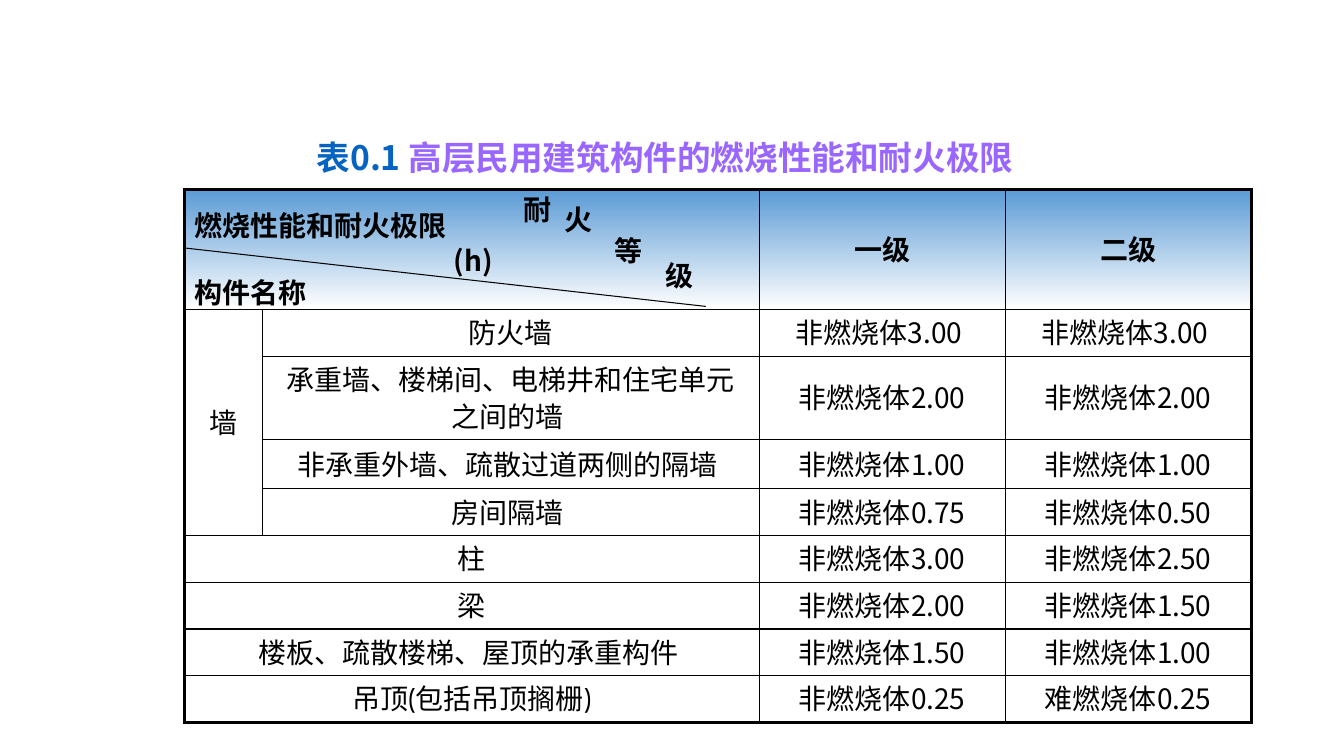
from lxml import etree
from pptx import Presentation, util as u
from pptx.dml.color import RGBColor
from pptx.enum import shapes, text
from pptx.oxml.ns import qn

# Content
TITLE = [("表0.1 ", "0563C1"), ("高层民用建筑构件的燃烧性能和耐火极限", "9966FF")]
GRADES = ["一级", "二级"]
WALL = "墙"
WALL_PARTS = [
    ("防火墙", ("非燃烧体", "3.00 "), ("非燃烧体", "3.00 ")),
    ("承重墙、楼梯间、电梯井和住宅单元之间的墙 ", ("非燃烧体", "2.00"), ("非燃烧体", "2.00")),
    ("非承重外墙、疏散过道两侧的隔墙 ", ("非燃烧体", "1.00"), ("非燃烧体", "1.00")),
    ("房间隔墙 ", ("非燃烧体", "0.75"), ("非燃烧体", "0.50")),
]
OTHER_PARTS = [
    ("柱", ("非燃烧体", "3.00"), ("非燃烧体", "2.50")),
    ("梁", ("非燃烧体", "2.00"), ("非燃烧体", "1.50")),
    ("楼板、疏散楼梯、屋顶的承重构件 ", ("非燃烧体", "1.50"), ("非燃烧体", "1.00")),
    ("吊顶(包括吊顶搁栅)", ("非燃烧体", "0.25"), ("难燃烧体", "0.25")),
]
CABIN, NOTO = "Cabin", "Noto Sans CJK SC"
# text, left, top, width, wraps, font
HEADER_LABELS = [
    ("耐", 509, 186, 50, True, CABIN),
    ("火", 550, 196, 50, True, CABIN),
    ("等", 600, 227, 48, False, CABIN),
    ("级", 650, 252, 48, False, CABIN),
    ("燃烧性能和耐火极限", 183, 202, 271, False, CABIN),
    ("(h)", 440, 237, 62, False, NOTO),
    ("构件名称", 183, 268, 132, False, CABIN),
]

# Layout, 100 px to the inch
PX = 9144
COLUMNS = [77, 213, 280, 244, 244]
ROWS = [119, 43, 70, 49, 43, 40, 40, 43, 43]
TABLE_LEFT, TABLE_TOP = 183, 188
BLACK, BLUE, WHITE = "000000", "5B9BD5", "FFFFFF"
THICK, THIN = 2.25, 1


def px(*lengths):
    return [u.Emu(length * PX) for length in lengths]


def color(value):
    return RGBColor.from_string(value)


def style(run, size, font, value, bold):
    run.font.size, run.font.name, run.font.bold = u.Pt(size), font, bold
    run.font.color.rgb = color(value)
    latin = run.font._element.find(qn("a:latin"))
    latin.addnext(latin.makeelement(qn("a:ea"), {"typeface": NOTO}))


def set_borders(cell, widths):
    """Widths run left, right, top, bottom; 0 leaves the edge open."""
    properties = cell._tc.get_or_add_tcPr()
    for index, (side, width) in enumerate(zip("LRTB", widths)):
        edge = etree.Element(qn(f"a:ln{side}"), w=str(u.Pt(width)))
        properties.insert(index, edge)
        if width:
            fill = etree.SubElement(edge, qn("a:solidFill"))
            etree.SubElement(fill, qn("a:srgbClr"), val=BLACK)
        else:
            etree.SubElement(edge, qn("a:noFill"))


def fill_cell(cell, is_header):
    if not is_header:
        cell.fill.background()
        return
    cell.fill.gradient()
    cell.fill.gradient_angle = 270
    for stop, value in zip(cell.fill.gradient_stops, (BLUE, WHITE)):
        stop.color.rgb = color(value)


def write_cell(cell, pieces, bold):
    cell.vertical_anchor = text.MSO_ANCHOR.MIDDLE
    paragraph = cell.text_frame.paragraphs[0]
    paragraph.alignment, paragraph.line_spacing = text.PP_ALIGN.CENTER, 0.9
    for piece, font in zip(pieces, (CABIN, NOTO)):
        run = paragraph.add_run()
        run.text = piece
        style(run, 20, font, BLACK, bold)


def table_regions():
    """Row, column, row span, column span and text pieces of every cell."""
    yield 0, 0, 1, 2, ()
    yield 0, 2, 1, 1, ()
    for column, grade in enumerate(GRADES, 3):
        yield 0, column, 1, 1, (grade,)
    yield 1, 0, len(WALL_PARTS), 1, (WALL,)
    for row, (part, *limits) in enumerate(WALL_PARTS + OTHER_PARTS, 1):
        first = 1 if row <= len(WALL_PARTS) else 0
        yield row, first, 1, 3 - first, (part,)
        for column, limit in enumerate(limits, 3):
            yield row, column, 1, 1, limit


def add_limits_table(slide):
    frame = slide.shapes.add_table(
        len(ROWS), len(COLUMNS),
        *px(TABLE_LEFT, TABLE_TOP, sum(COLUMNS), sum(ROWS)))
    table = frame.table
    table.first_row = table.horz_banding = False
    for column, width in zip(table.columns, px(*COLUMNS)):
        column.width = width
    for row, height in zip(table.rows, px(*ROWS)):
        row.height = height

    for top, left, height, width, pieces in table_regions():
        bottom, right = top + height, left + width
        is_header = top == 0
        open_edge = is_header and 2 in (left, right)
        borders = [
            THICK if left == 0 else 0 if open_edge and left == 2 else THIN,
            THICK if right == len(COLUMNS) else 0 if open_edge and right == 2 else THIN,
            THICK if is_header else THIN,
            THICK if bottom == len(ROWS) else THIN,
        ]
        for row in range(top, bottom):
            for column in range(left, right):
                fill_cell(table.cell(row, column), is_header)
                set_borders(table.cell(row, column), borders)
        origin = table.cell(top, left)
        if height * width > 1:
            origin.merge(table.cell(bottom - 1, right - 1))
        write_cell(origin, pieces, is_header)


def main():
    deck = Presentation()
    deck.slide_width, deck.slide_height = px(1333, 750)
    slide = deck.slides.add_slide(deck.slide_layouts[5])

    # Title
    title = slide.shapes.title
    title.left, title.top, title.width, title.height = px(304, 99, 756, 82)
    title.text_frame.auto_size = text.MSO_AUTO_SIZE.NONE
    title.text_frame.vertical_anchor = text.MSO_ANCHOR.BOTTOM
    heading = title.text_frame.paragraphs[0]
    heading.alignment, heading.line_spacing = text.PP_ALIGN.LEFT, 0.9
    for piece, value in TITLE:
        run = heading.add_run()
        run.text = piece
        style(run, 24, NOTO, value, True)

    add_limits_table(slide)

    # Diagonal of the header cell
    diagonal = slide.shapes.add_connector(
        shapes.MSO_CONNECTOR.STRAIGHT, *px(183, 246, 700, 304))
    diagonal.line.color.rgb, diagonal.line.width = color(BLACK), u.Pt(0.75)
    etree.SubElement(diagonal._element.spPr, qn("a:effectLst"))

    # Labels around the diagonal
    for label, left, top, width, wraps, font in HEADER_LABELS:
        box = slide.shapes.add_textbox(*px(left, top, width, 43))
        box.text_frame.text = label
        box.text_frame.word_wrap = wraps
        box.text_frame.auto_size = text.MSO_AUTO_SIZE.SHAPE_TO_FIT_TEXT
        style(box.text_frame.paragraphs[0].runs[0], 20, font, BLACK, True)

    deck.save("out.pptx")


if __name__ == "__main__":
    main()
